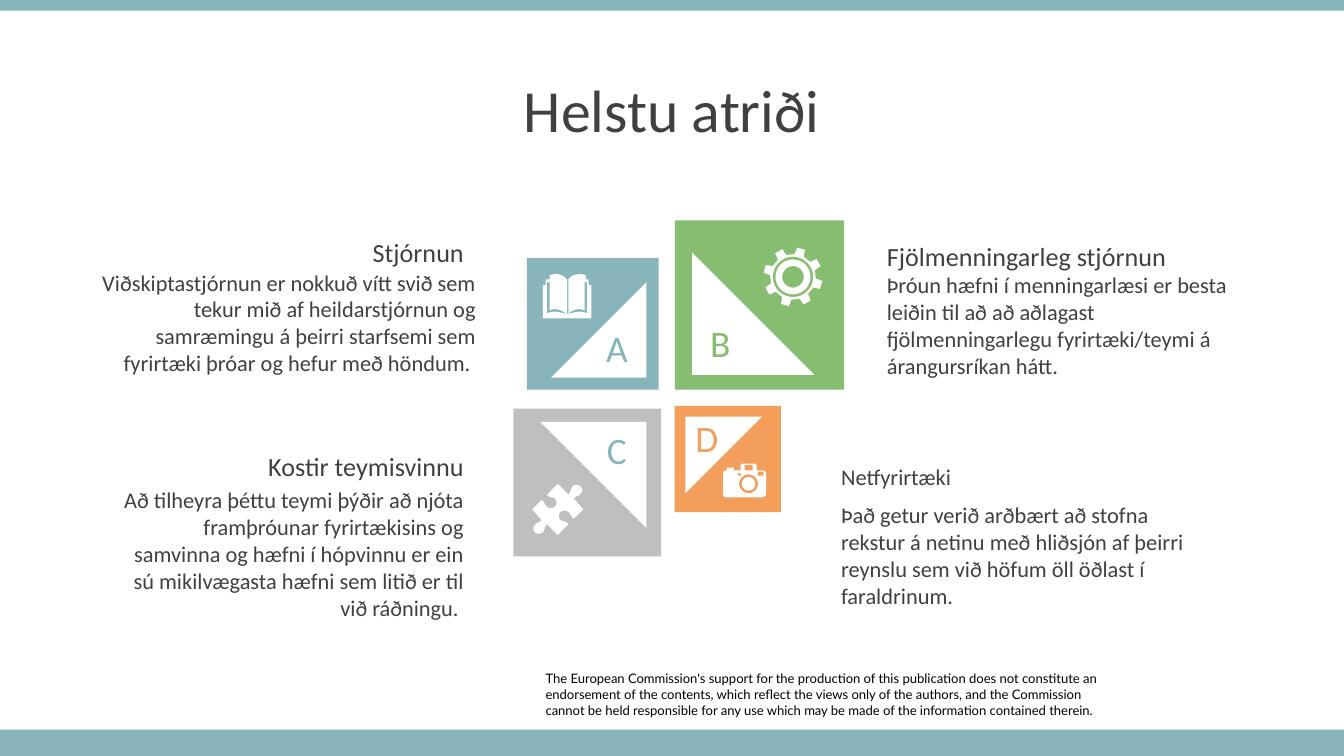
"""Build the "Helstu atriði" slide: four lettered squares with icons and descriptions."""
from math import cos, pi, sin

from pptx import Presentation
from pptx.dml.color import RGBColor
from pptx.enum.shapes import MSO_SHAPE as Shape
from pptx.enum.text import MSO_ANCHOR as Anchor, PP_ALIGN as Align
from pptx.util import Inches, Pt

TEAL, GREEN, ORANGE, GRAY = "87B5BA", "86BD70", "F39E5A", "BFBFBF"
WHITE, DARK, BLACK = "FFFFFF", "404040", "000000"

deck = Presentation()
deck.slide_width = Inches(10)
deck.slide_height = Inches(10) * 9 // 16
page = deck.slides.add_slide(deck.slide_layouts[6])


def add_text(text, left, top, width, height, size, color=DARK, align=Align.LEFT, font="Calibri"):
    box = page.shapes.add_textbox(Inches(left), Inches(top), Inches(width), Inches(height))
    box.text_frame.word_wrap = True
    box.text_frame.text = text
    for para in box.text_frame.paragraphs:
        para.alignment = align
        for span in para.runs:
            span.font.name = font
            span.font.size = Pt(size)
            span.font.color.rgb = RGBColor.from_string(color)
    return box.text_frame


def add_icon(contours):
    builder = None
    for start, *steps in contours:
        x, y = start
        points = []
        for step in steps:
            if len(step) == 6:
                x1, y1, x2, y2, x3, y3 = step
                for t in (0.2, 0.4, 0.6, 0.8, 1):
                    a, b, c, d = (1 - t) ** 3, 3 * t * (1 - t) ** 2, 3 * t * t * (1 - t), t ** 3
                    points.append((a * x + b * x1 + c * x2 + d * x3, a * y + b * y1 + c * y2 + d * y3))
            else:
                points.append(step)
            x, y = points[-1]
        origin = Inches(start[0]), Inches(start[1])
        if builder is None:
            builder = page.shapes.build_freeform(*origin, scale=1.0)
        else:
            builder.move_to(*origin)
        builder.add_line_segments([(Inches(px), Inches(py)) for px, py in points], close=True)
    icon = builder.convert_to_shape()
    icon.shadow.inherit = False
    icon.fill.solid()
    icon.fill.fore_color.rgb = RGBColor.from_string(WHITE)
    icon.line.fill.background()


footer = add_text(
    "The European Commission's support for the production of this publication does not constitute an "
    "endorsement of the contents, which reflect the views only of the authors, and the Commission\n"
    "cannot be held responsible for any use which may be made of the information contained therein.",
    4.06, 4.99, 4.17, 0.35, 7, BLACK, font="Lato")
footer.margin_left = footer.margin_right = footer.margin_top = footer.margin_bottom = 0

for kind, left, top, width, height, turn, color in [
    (Shape.RECTANGLE, 0, 5.43, 10, 0.2, 0, TEAL),
    (Shape.RECTANGLE, 0, 0, 10, 0.08, 0, TEAL),
    (Shape.RECTANGLE, 3.92, 1.92, 0.98, 0.98, 0, TEAL),
    (Shape.RIGHT_TRIANGLE, 4.1, 2.1, 0.71, 0.71, 270, WHITE),
    (Shape.RECTANGLE, 5.02, 1.64, 1.26, 1.26, 90, GREEN),
    (Shape.RIGHT_TRIANGLE, 5.15, 1.88, 0.91, 0.91, 0, WHITE),
    (Shape.RECTANGLE, 5.02, 3.02, 0.79, 0.79, 180, ORANGE),
    (Shape.RIGHT_TRIANGLE, 5.1, 3.1, 0.57, 0.57, 90, WHITE),
    (Shape.RECTANGLE, 3.82, 3.04, 1.1, 1.1, 270, GRAY),
    (Shape.RIGHT_TRIANGLE, 4.02, 3.14, 0.79, 0.79, 180, WHITE),
]:
    block = page.shapes.add_shape(kind, Inches(left), Inches(top), Inches(width), Inches(height))
    block.rotation = turn
    block.shadow.inherit = False
    block.fill.solid()
    block.fill.fore_color.rgb = RGBColor.from_string(color)
    block.line.fill.background()

title = add_text("Helstu atriði", 0, 0.49, 10, 0.63, 32, align=Align.CENTER)
title.vertical_anchor = Anchor.MIDDLE

for letter, left, top, color in [
    ("A", 4.37, 2.37, TEAL), ("B", 5.14, 2.33, GREEN),
    ("C", 4.37, 3.13, TEAL), ("D", 5.04, 3.04, ORANGE),
]:
    add_text(letter, left, top, 0.44, 0.44, 20, color, Align.CENTER)

book_cover = [
    (4.22, 2.08), (4.19, 2.05, 4.17, 2.04, 4.14, 2.04), (4.12, 2.04, 4.11, 2.04, 4.09, 2.05),
    (4.09, 2.08), (4.06, 2.08), (4.06, 2.12), (4.04, 2.12), (4.04, 2.37),
    (4.4, 2.37), (4.4, 2.12), (4.38, 2.12), (4.38, 2.08), (4.36, 2.08), (4.36, 2.05),
    (4.34, 2.04, 4.32, 2.04, 4.31, 2.04), (4.28, 2.04, 4.25, 2.05, 4.23, 2.08),
]
left_edge = [
    (4.07, 2.1), (4.09, 2.1), (4.09, 2.31),
    (4.13, 2.29, 4.17, 2.3, 4.22, 2.34), (4.16, 2.32, 4.13, 2.31, 4.07, 2.33),
]
right_edge = [tuple(v if i % 2 else 8.44 - v for i, v in enumerate(step)) for step in left_edge]
book_spine = [(4.22, 2.08), (4.23, 2.08), (4.23, 2.34), (4.22, 2.34)]
add_icon([book_cover, left_edge, right_edge, book_spine])

puzzle_half = [
    (4.32, 3.62), (4.33, 3.63, 4.34, 3.66, 4.32, 3.67), (4.31, 3.7, 4.29, 3.68, 4.27, 3.71),
    (4.34, 3.79), (4.27, 3.86), (4.24, 3.84, 4.25, 3.82, 4.23, 3.81),
    (4.21, 3.79, 4.19, 3.8, 4.17, 3.81), (4.16, 3.82, 4.15, 3.85, 4.17, 3.87),
    (4.2, 3.89, 4.21, 3.87, 4.23, 3.9), (4.15, 3.98), (4.07, 3.9),
    (4.05, 3.92, 4.06, 3.93, 4.04, 3.96), (4.02, 3.98, 3.99, 3.97, 3.98, 3.96),
]
other_half = [tuple((8.3, 7.58)[i % 2] - v for i, v in enumerate(step)) for step in puzzle_half]
add_icon([puzzle_half + other_half[1:]])

circles = []
for center_x, center_y, radius in [
    (5.9, 2.06, 0.15), (5.9, 2.06, 0.13), (5.9, 2.06, 0.08), (5.57, 3.6, 0.07), (5.57, 3.6, 0.05),
]:
    circles.append([(center_x + radius * cos(k * pi / 20), center_y + radius * sin(k * pi / 20))
                    for k in range(40)])

gear_rim = []
for tooth in range(8):
    for offset, radius in [(-12, 0.17), (-8, 0.22), (8, 0.22), (12, 0.17)]:
        angle = (16 + 45 * tooth + offset) * pi / 180
        gear_rim.append((5.9 + radius * sin(angle), 2.06 - radius * cos(angle)))
add_icon([gear_rim] + circles[:3])

camera_body = [
    (5.52, 3.45), (5.62, 3.45), (5.63, 3.46), (5.63, 3.5), (5.67, 3.5),
    (5.69, 3.5, 5.7, 3.51, 5.7, 3.52), (5.7, 3.67), (5.7, 3.69, 5.69, 3.7, 5.67, 3.7),
    (5.4, 3.7), (5.39, 3.7, 5.38, 3.69, 5.38, 3.67), (5.38, 3.52),
    (5.38, 3.51, 5.39, 3.5, 5.4, 3.5), (5.41, 3.5), (5.41, 3.48), (5.46, 3.48),
    (5.46, 3.5), (5.51, 3.5), (5.51, 3.46),
]
windows = [
    [(x1, y1), (x2, y1), (x2, y2), (x1, y2)]
    for x1, y1, x2, y2 in [(5.49, 3.52, 5.51, 3.54), (5.64, 3.51, 5.68, 3.54), (5.54, 3.46, 5.6, 3.5)]
]
add_icon([camera_body] + windows + circles[3:])

for text, left, top, width, height, size, align in [
    ("Viðskiptastjórnun er nokkuð vítt svið sem tekur mið af heildarstjórnun og samræmingu á þeirri "
     "starfsemi sem fyrirtæki þróar og hefur með höndum. ", 0.57, 1.95, 3.07, 0.91, 12, Align.RIGHT),
    ("Stjórnun", 0.57, 1.71, 2.98, 0.34, 14, Align.RIGHT),
    ("Að tilheyra þéttu teymi þýðir að njóta framþróunar fyrirtækisins og samvinna og hæfni í hópvinnu "
     "er ein sú mikilvægasta hæfni sem litið er til við ráðningu. ",
     0.77, 3.57, 2.78, 1.11, 12, Align.RIGHT),
    ("Kostir teymisvinnu", 0.77, 3.3, 2.78, 0.34, 14, Align.RIGHT),
    ("Þróun hæfni í menningarlæsi er besta leiðin til að að aðlagast fjölmenningarlegu "
     "fyrirtæki/teymi á árangursríkan hátt.", 6.5, 1.97, 2.78, 0.91, 12, Align.LEFT),
    ("Fjölmenningarleg stjórnun", 6.5, 1.74, 2.72, 0.34, 14, Align.LEFT),
    ("Það getur verið arðbært að stofna rekstur á netinu með hliðsjón af þeirri reynslu sem við höfum "
     "öll öðlast í faraldrinum.", 6.16, 3.68, 2.78, 0.91, 12, Align.LEFT),
    ("Netfyrirtæki", 6.16, 3.4, 2.78, 0.3, 12, Align.LEFT),
]:
    add_text(text, left, top, width, height, size, align=align)

deck.save("out.pptx")
